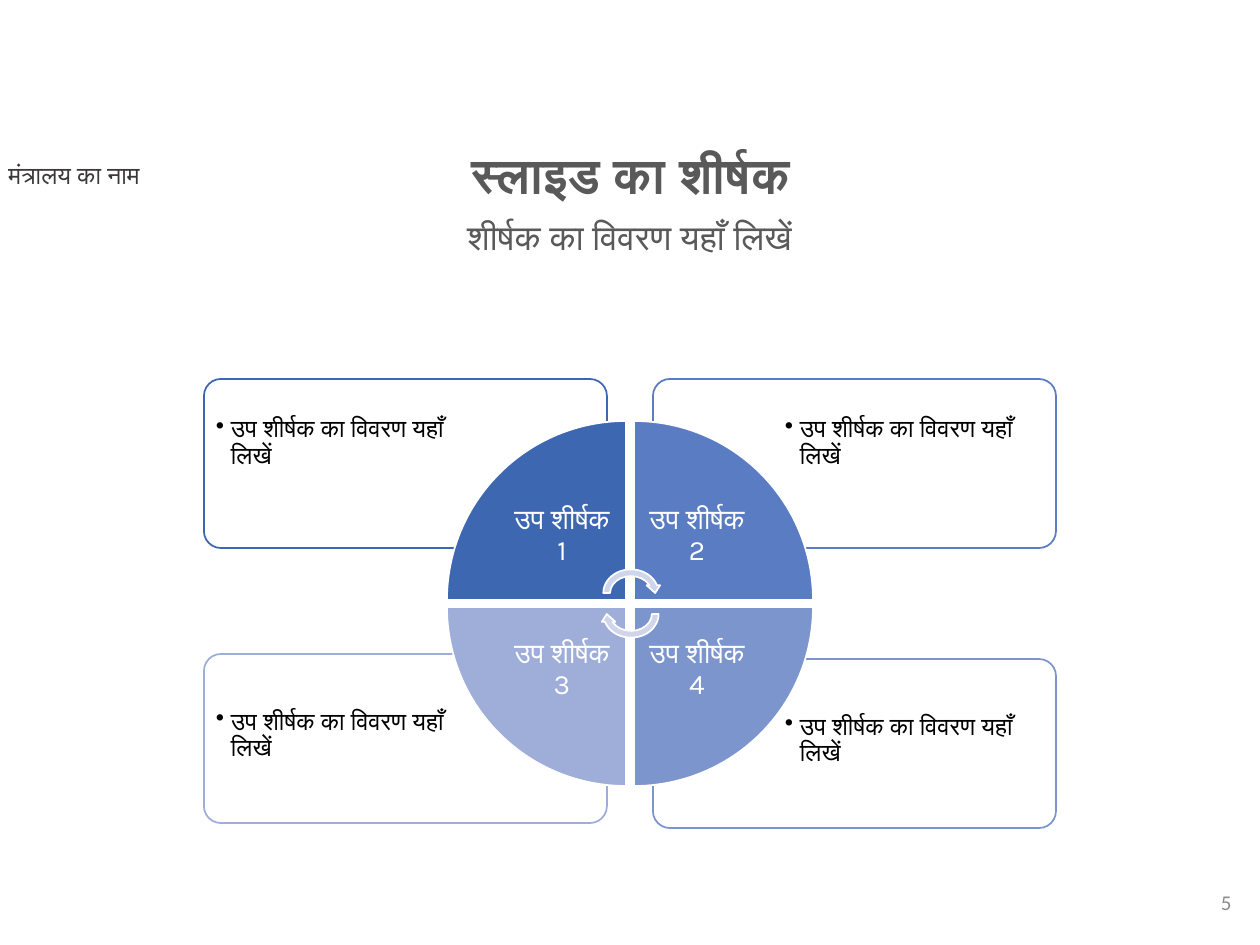
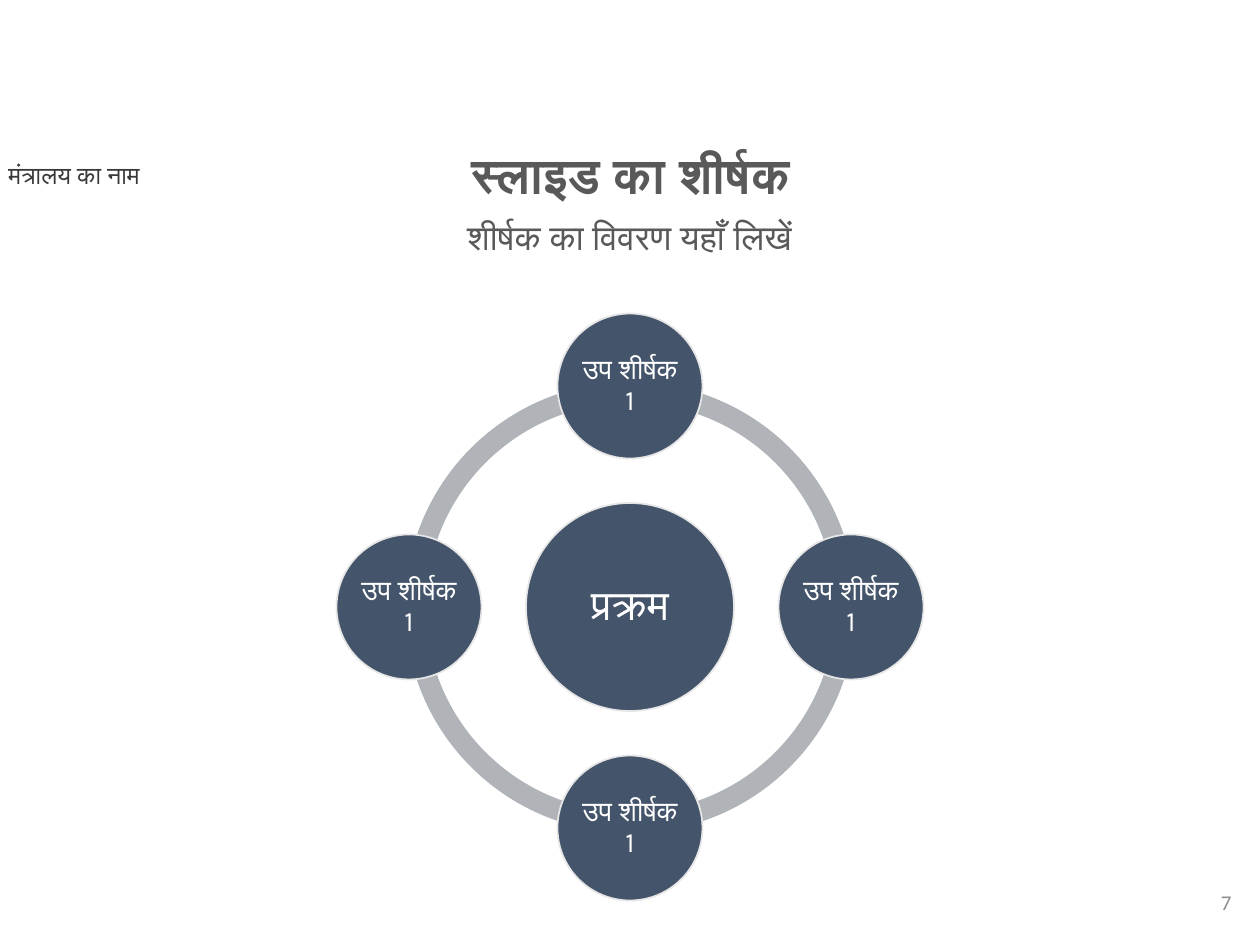
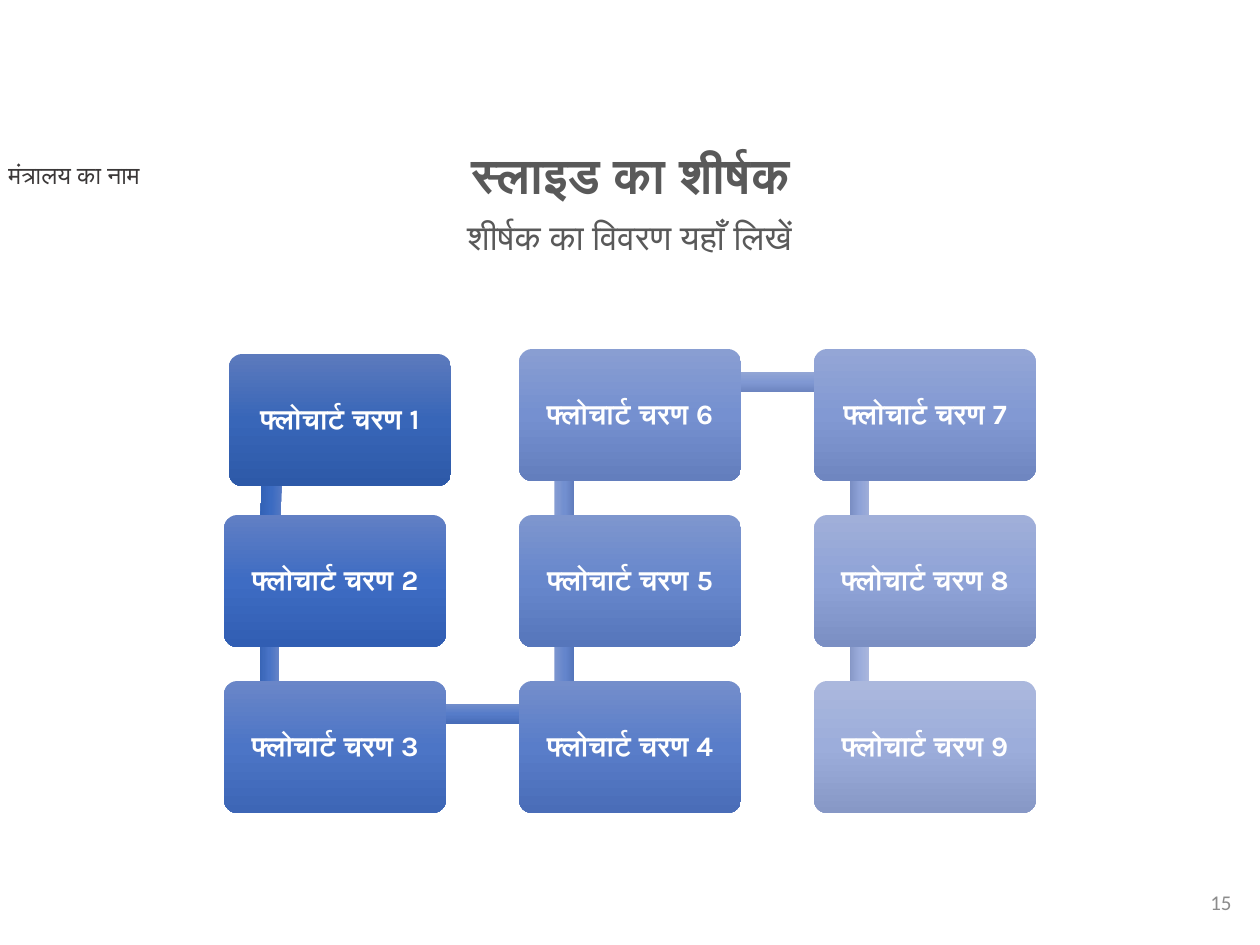
import copy

import lxml.etree
import pptx
import pptx.dml.color
import pptx.enum.shapes
import pptx.enum.text
import pptx.oxml.ns
import pptx.util

EMU_PER_PX = 914400 / 126
SHAPE = pptx.enum.shapes.MSO_SHAPE
ALIGN = pptx.enum.text.PP_ALIGN
ANCHOR = pptx.enum.text.MSO_ANCHOR
qn = pptx.oxml.ns.qn

COLORS = {
    "white": "FFFFFF",
    "black": "000000",
    "ministry": "3B3838",
    "heading": "595959",
    "page_number": "8C8C8C",
    "quarter_1": "3E67B2",
    "quarter_2": "5A7CC3",
    "quarter_3": "9FAED8",
    "quarter_4": "7D95CD",
    "cycle_arrow": "CFD5EA",
    "ring": "B0B4B9",
    "circle": "44546A",
    "circle_edge": "E7E6E6",
}

# Top, middle and bottom colours of each flowchart step and of the bar after it
STEP_GRADIENTS = [
    "5C7ABD 3866B8 2D59A8", "617FC4 3E6CC3 315EB3", "6A86C8 4C75C6 3D66B6",
    "748ECB 597DC9 4A6DB8", "7E96CE 6787CC 5676BB", "899ED2 7590D0 637EBD",
    "94A6D6 8299D3 6F86C0", "A0AFD9 8FA3D7 7B8FC3", "ABB8DD 9CADDB 8798C6",
]
BAR_GRADIENTS = [
    "5E7EC4 3B6BC1 2F5EB1", "6785C7 4873C6 3965B6", "718DCB 567CC9 476CB8",
    "7C95CE 6485CC 5475BB", "879DD2 728FD0 617DBD", "93A6D5 8098D3 6D85C0",
    "9FAED9 8EA2D7 7A8EC3", "AAB7DD 9BACDB 8697C6",
]


def write_text(shape, text, size, color, font="Calibri", bold=False, align=ALIGN.LEFT,
               anchor=ANCHOR.TOP, inset=None, spacing=None, bullet=False):
    frame = shape.text_frame
    frame.word_wrap = True
    frame.vertical_anchor = anchor
    if inset is not None:
        margin = round(inset * EMU_PER_PX)
        frame.margin_left = frame.margin_right = margin
        frame.margin_top = frame.margin_bottom = margin
    paragraph = frame.paragraphs[0]
    paragraph.alignment = align
    if spacing:
        paragraph.line_spacing = spacing
    if bullet:
        properties = paragraph._p.get_or_add_pPr()
        indent = round(15 * EMU_PER_PX)
        properties.set("marL", str(indent))
        properties.set("indent", str(-indent))
        lxml.etree.SubElement(properties, qn("a:buChar")).set("char", "•")
    run = paragraph.add_run()
    run.text = text
    run.font.name = font
    run.font.size = pptx.util.Pt(size)
    run.font.bold = bold
    run.font.color.rgb = pptx.dml.color.RGBColor.from_string(color)


def add_box(slide, kind, left, top, width, height, fill=None, line=None, rotation=0):
    """Add a preset shape, or a text box when kind is None; several fill colours make a gradient."""
    place = [round(length * EMU_PER_PX) for length in (left, top, width, height)]
    if kind is None:
        return slide.shapes.add_textbox(*place)
    shape = slide.shapes.add_shape(kind, *place)
    shape.shadow.inherit = False
    shape.rotation = rotation
    colors = fill.split()
    if len(colors) == 1:
        shape.fill.solid()
        shape.fill.fore_color.rgb = pptx.dml.color.RGBColor.from_string(fill)
    else:
        shape.fill.gradient()
        shape.fill.gradient_angle = 270
        stop_list = shape._element.spPr.find(".//" + qn("a:gsLst"))
        stop_list.insert(1, copy.deepcopy(stop_list[0]))
        for stop, color, position in zip(shape.fill.gradient_stops, colors, (0, 0.5, 1)):
            stop.position = position
            stop.color.rgb = pptx.dml.color.RGBColor.from_string(color)
    if line:
        shape.line.color.rgb = pptx.dml.color.RGBColor.from_string(line)
        shape.line.width = pptx.util.Pt(1)
    else:
        shape.line.fill.background()
    return shape


presentation = pptx.Presentation()
presentation.slide_width = round(1260 * EMU_PER_PX)
presentation.slide_height = round(945 * EMU_PER_PX)
centered = {"align": ALIGN.CENTER, "spacing": 0.9}
label_format = {"font": "Karla", "color": COLORS["white"], "anchor": ANCHOR.MIDDLE, **centered}

# Heading, ministry name and page number on every slide
slides = []
for page_number in ("5", "7", "15"):
    slide = presentation.slides.add_slide(presentation.slide_layouts[5])
    slides.append(slide)
    title = slide.shapes.title
    title.left, title.top, title.width, title.height = [
        round(length * EMU_PER_PX) for length in (234, 145, 793, 59)]
    write_text(title, "स्लाइड का शीर्षक", 28, COLORS["heading"], bold=True, **centered)
    subtitle = add_box(slide, None, 184, 214, 891, 79)
    write_text(subtitle, "शीर्षक का विवरण यहाँ लिखें", 20, COLORS["heading"], **centered)
    ministry = add_box(slide, None, -4, 154, 275, 43)
    write_text(ministry, "मंत्रालय का नाम", 14, COLORS["ministry"])
    number = add_box(slide, None, 960, 877, 284, 50)
    write_text(number, page_number, 12, COLORS["page_number"],
               align=ALIGN.RIGHT, anchor=ANCHOR.MIDDLE)

cycle_slide, process_slide, flowchart_slide = slides

# Cycle: description cards behind the four quarters
# Card left and top, then left and top of the description
cards = {
    4: (653, 659, 777, 706),
    3: (204, 654, 208, 701),
    2: (653, 379, 777, 383),
    1: (204, 379, 208, 383),
}
for quarter, (left, top, text_left, text_top) in cards.items():
    card = add_box(cycle_slide, SHAPE.ROUNDED_RECTANGLE, left, top, 403, 169,
                   COLORS["white"], COLORS[f"quarter_{quarter}"])
    card.adjustments[0] = 0.1
    description = add_box(cycle_slide, None, text_left, text_top, 275, 120)
    write_text(description, "उप शीर्षक का विवरण यहाँ लिखें", 14, COLORS["black"], font="Karla",
               anchor=ANCHOR.MIDDLE if quarter < 3 else ANCHOR.TOP,
               inset=8, spacing=0.9, bullet=True)

# Cycle: quarters, clockwise from the upper left
for turn, (quarter, column, row) in enumerate([(1, 0, 0), (2, 1, 0), (4, 1, 1), (3, 0, 1)]):
    left, top = 447 + 187 * column, 421 + 186 * row
    add_box(cycle_slide, SHAPE.PIE_WEDGE, left, top, 179, 179,
            COLORS[f"quarter_{quarter}"], COLORS["white"], rotation=90 * turn)
    label = add_box(cycle_slide, None, left + 52 * (1 - column), top + 52 * (1 - row), 126, 126)
    write_text(label, f"उप शीर्षक {quarter}", 16, inset=15, **label_format)

# Cycle: arrows in the middle
for top, rotation in ((566, 0), (587, 180)):
    add_box(cycle_slide, SHAPE.CIRCULAR_ARROW, 600, top, 62, 54,
            COLORS["cycle_arrow"], COLORS["white"], rotation)

# Process: ring of four arcs (a quarter turn is 54 adjustment units)
center_x, center_y, orbit = 630, 607, 221
for start in (108, 54, 0, 162):
    arc = add_box(process_slide, SHAPE.BLOCK_ARC, center_x - 225, center_y - 225, 451, 451,
                  COLORS["ring"])
    for index, value in enumerate((start, (start + 54) % 216, 0.046)):
        arc.adjustments[index] = value

# Process: centre circle and its four satellites
circles = [(0, 0, 208, "प्रक्रम", 24)]
for step_x, step_y in ((0, -1), (1, 0), (0, 1), (-1, 0)):
    circles.append((step_x, step_y, 145, "उप शीर्षक 1", 16))
for step_x, step_y, diameter, text, size in circles:
    circle = add_box(process_slide, SHAPE.OVAL,
                     center_x + orbit * step_x - diameter / 2,
                     center_y + orbit * step_y - diameter / 2,
                     diameter, diameter, COLORS["circle"], COLORS["circle_edge"])
    write_text(circle, text, size, inset=3, **label_format)

# Flowchart: steps run down, up and down again, each over the bar to the next
column_pitch, row_pitch = 295, 166
for index, gradient in enumerate(STEP_GRADIENTS):
    column, row = divmod(index, 3)
    if column == 1:
        row = 2 - row
    left, top = 224 + column_pitch * column, 349 + row_pitch * row
    if index < len(BAR_GRADIENTS):
        if index % 3 == 2:
            bar = (left + 47, top + 23, column_pitch, 20)
            rotation = 0
        elif column == 1:
            bar = (left - 37, top - 60, 165, 20)
            rotation = 270
        else:
            bar = (left - 37, top + 106, 165, 20)
            rotation = 90
        if index == 0:
            bar = (192, 457, 160, 20)
            rotation = 91.7
        add_box(flowchart_slide, SHAPE.RECTANGLE, *bar, BAR_GRADIENTS[index], rotation=rotation)
    shift = 5 if index == 0 else 0
    step = add_box(flowchart_slide, SHAPE.ROUNDED_RECTANGLE, left + shift, top + shift,
                   222, 132, gradient)
    step.adjustments[0] = 0.1
    write_text(step, f"फ्लोचार्ट चरण {index + 1}", 16, bold=True, inset=9, **label_format)

presentation.save("out.pptx")
